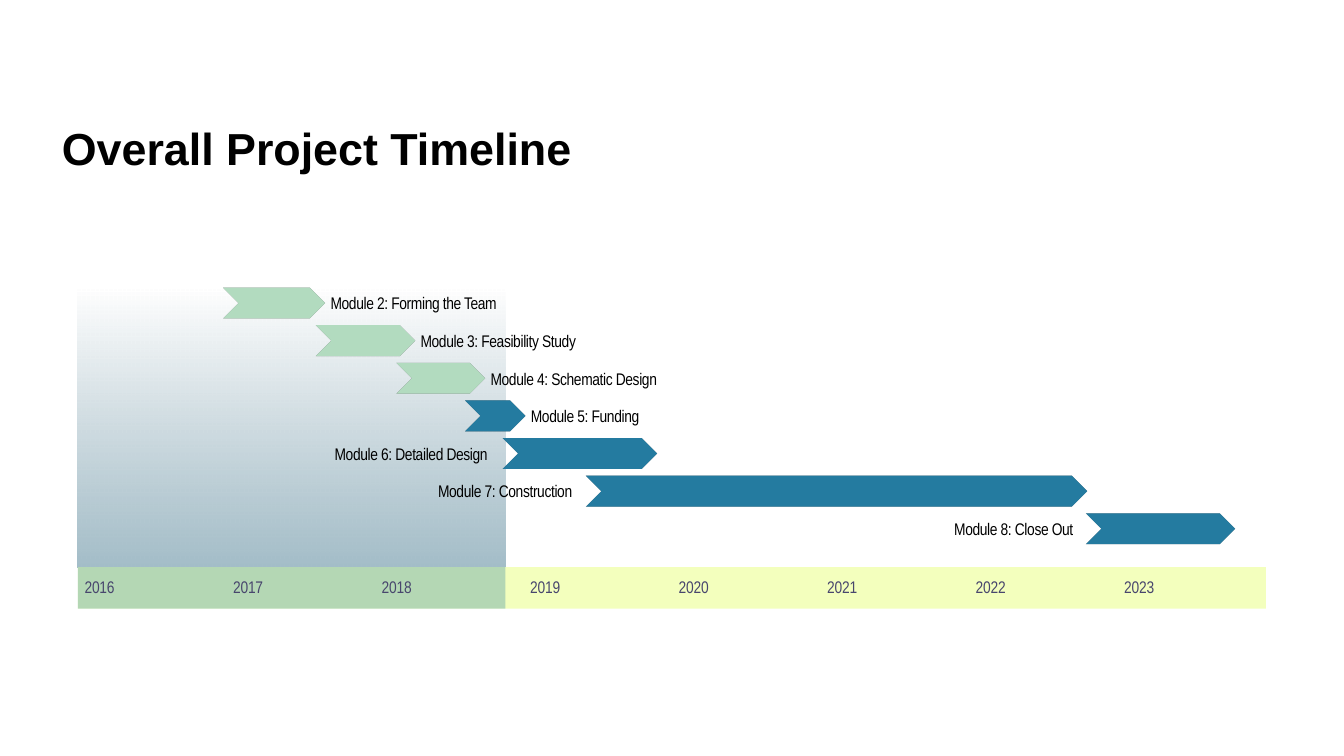
from pptx import Presentation
from pptx.dml.color import RGBColor
from pptx.enum.shapes import MSO_SHAPE
from pptx.enum.text import MSO_ANCHOR, MSO_AUTO_SIZE, PP_ALIGN
from pptx.oxml.ns import qn
from pptx.util import Inches, Pt
from lxml import etree

RECT, CHEVRON = MSO_SHAPE.RECTANGLE, MSO_SHAPE.CHEVRON
TOP, MIDDLE = MSO_ANCHOR.TOP, MSO_ANCHOR.MIDDLE
NO_FIT, FLUSH = MSO_AUTO_SIZE.NONE, PP_ALIGN.LEFT

TITLE = "Overall Project Timeline"
YEARS = range(2016, 2024)
# name, bar left, bar width, label width, label side, state
MODULES = [
    ("Module 2: Forming the Team", 1.66, 0.76, 1.32, "right", "done"),
    ("Module 3: Feasibility Study", 2.35, 0.74, 1.23, "right", "done"),
    ("Module 4: Schematic Design", 2.95, 0.66, 1.31, "right", "done"),
    ("Module 5: Funding", 3.46, 0.45, 0.85, "right", "open"),
    ("Module 6: Detailed Design", 3.74, 1.15, 1.21, "left", "open"),
    ("Module 7: Construction", 4.36, 3.73, 1.06, "left", "open"),
    ("Module 8: Close Out", 8.08, 1.11, 0.94, "left", "open"),
]
THEME = {
    "done": "B2DBBF", "open": "247BA0", "band": "F3FFBD",
    "year": "48466D", "text": "000000",
    "head": "Arial", "body": "Arial Narrow",
    "title_size": 24, "label_size": 9,
}
SLIDE_W = 10
LEFT, WIDTH, PAST = 0.58, 8.84, 3.18
ROW_TOP, ROW_STEP, BAR_H = 2.14, 0.28, 0.23
BAND_TOP, BAND_H = 4.22, 0.31
GAP, LABEL_H = 0.04, 0.15


def fade(parent, alpha):
    """Set the opacity, in percent, of the first colour under parent."""
    color = next(parent.iter(qn("a:srgbClr")))
    etree.SubElement(color, qn("a:alpha"), val=str(alpha * 1000))


def shade(shape):
    """Lay a half-clear black shadow right behind the shape."""
    effects = shape._element.spPr.find(qn("a:effectLst"))
    cast = etree.SubElement(effects, qn("a:outerShdw"), blurRad="0", dist="0",
                            dir="0", algn="ctr", rotWithShape="0")
    etree.SubElement(cast, qn("a:srgbClr"), val=THEME["text"])
    fade(cast, 50)


def block(slide, kind, box, color, alpha=100, shadow=False):
    shape = slide.shapes.add_shape(kind, *map(Inches, box))
    shape.fill.solid()
    shape.fill.fore_color.rgb = RGBColor.from_string(color)
    shape.line.fill.background()
    shape.shadow.inherit = False
    if alpha < 100:
        fade(shape._element.spPr, alpha)
    if shadow:
        shade(shape)
    return shape


def write(shape, text, size, font, color, bold=False, space=0, inset=(0, 0),
          anchor=MIDDLE, wrap=True, lines=None):
    frame = shape.text_frame
    frame.auto_size, frame.word_wrap = NO_FIT, wrap
    frame.vertical_anchor = anchor
    frame.margin_left = frame.margin_right = Inches(inset[0])
    frame.margin_top = frame.margin_bottom = Inches(inset[1])
    para = frame.paragraphs[0]
    para.alignment = FLUSH
    if lines:
        para.line_spacing = lines
    run = para.add_run()
    run.text = text
    run.font.size, run.font.name, run.font.bold = Pt(size), font, bold
    run.font.color.rgb = RGBColor.from_string(color)
    if space:
        run._r.get_or_add_rPr().set("spc", str(space))


def label(slide, text, box, color, **format):
    shape = slide.shapes.add_textbox(*map(Inches, box))
    write(shape, text, THEME["label_size"], THEME["body"], color, **format)


def add_band(slide):
    past = block(slide, RECT, (LEFT, ROW_TOP, PAST, BAND_TOP - ROW_TOP),
                 THEME["open"], shadow=True)
    past.fill.gradient()
    past.fill.gradient_angle = 270
    for stop, alpha in zip(past.fill.gradient_stops, (0, 30)):
        stop.color.rgb = RGBColor.from_string(THEME["open"])
        fade(stop._gs, alpha)
    block(slide, RECT, (LEFT, BAND_TOP, WIDTH, BAND_H), THEME["band"])
    block(slide, RECT, (LEFT, BAND_TOP, PAST, BAND_H), THEME["open"], alpha=30)
    step = WIDTH / len(YEARS)
    for i, year in enumerate(YEARS):
        label(slide, str(year), (LEFT + 0.05 + i * step, 4.3, 0.23, 0.14),
              THEME["year"], space=-10, wrap=False)


def add_bars(slide):
    for i, (name, left, width, span, side, state) in enumerate(MODULES):
        top = ROW_TOP + i * ROW_STEP
        block(slide, CHEVRON, (left, top, width, BAR_H), THEME[state],
              shadow=True)
        start = left + width + GAP if side == "right" else left - GAP - span
        label(slide, name, (start, top + GAP, span, LABEL_H), THEME["text"],
              space=-20)


def add_title(slide):
    title = slide.shapes.title
    title.left, title.top, title.width, title.height = map(
        Inches, (0.27, 0.65, 9.48, 1.92))
    write(title, TITLE, THEME["title_size"], THEME["head"], THEME["text"],
          bold=True, inset=(0.19, 0.05), anchor=TOP, lines=1.5)


def main():
    deck = Presentation()
    deck.slide_width = Inches(SLIDE_W)
    deck.slide_height = Inches(SLIDE_W * 9 / 16)
    slide = deck.slides.add_slide(deck.slide_layouts[5])
    add_band(slide)
    add_bars(slide)
    add_title(slide)
    deck.save("out.pptx")


if __name__ == "__main__":
    main()
